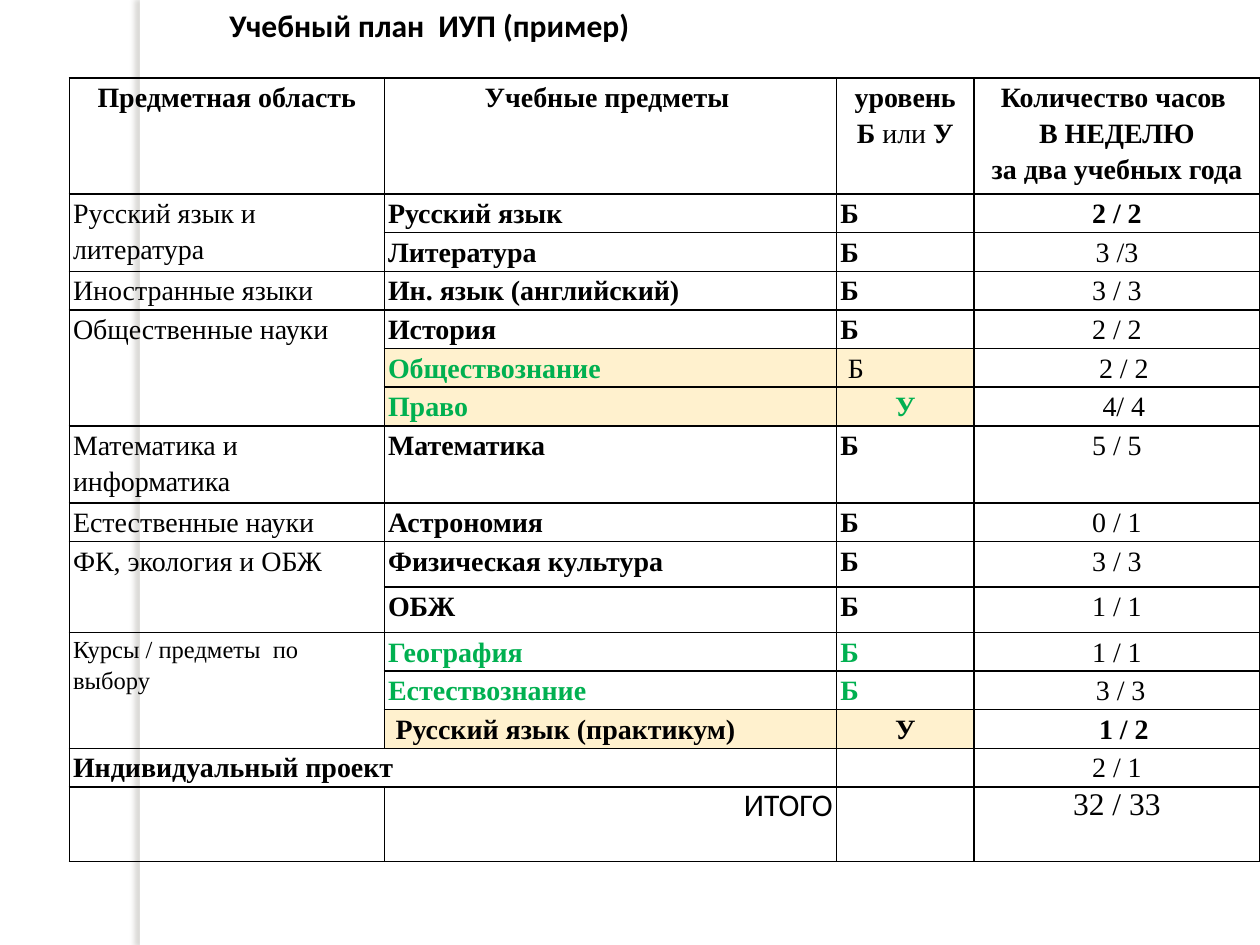
from lxml.etree import SubElement
from pptx import Presentation
from pptx.dml.color import RGBColor
from pptx.enum.shapes import MSO_SHAPE
from pptx.enum.text import MSO_ANCHOR, MSO_AUTO_SIZE, PP_ALIGN
from pptx.oxml import parse_xml
from pptx.oxml.ns import nsdecls, qn
from pptx.util import Inches, Pt

TITLE = "Учебный план  ИУП (пример)"
ROWS = [
    ("Предметная область", "Учебные предметы ", "уровень\nБ |или| У",
     "Количество часов \nВ НЕДЕЛЮ\nза два учебных года"),
    ("Русский язык и литература", "Русский язык", "Б", "2 / 2"),
    ("", "Литература", "Б", "3 /3"),
    ("Иностранные языки", "Ин. язык (английский)", "Б", "3 / 3"),
    ("Общественные науки", "История", "Б", "2 / 2"),
    ("", "Обществознание", "Б", "2 / 2"),
    ("", "Право", "У", "4/ 4"),
    ("Математика и информатика", "Математика", "Б", "5 / 5"),
    ("Естественные науки", "Астрономия", "Б", "0 / 1"),
    ("ФК, экология и ОБЖ", "Физическая культура", "Б", "3 / 3"),
    ("", "ОБЖ", "Б", "1 / 1"),
    ("Курсы / предметы  по выбору", "География", "Б", "1 / 1"),
    ("", "Естествознание", "Б", "3 / 3"),
    ("", "Русский язык (практикум)", "У", "1 / 2"),
    ("Индивидуальный проект", "", "", "2 / 1"),
    ("", "ИТОГО", "", "32 / 33"),
]
COLUMN_WIDTHS = [2.5, 3.59, 1.09, 2.27]
ROW_HEIGHTS = [0.87, 0.28, 0.29, 0.28, 0.28, 0.28, 0.28, 0.57,
               0.28, 0.36, 0.36, 0.29, 0.29, 0.28, 0.29, 0.59]
MERGES = [((1, 0), (2, 0)), ((4, 0), (6, 0)), ((9, 0), (10, 0)),
          ((11, 0), (13, 0)), ((14, 0), (14, 1))]
HIGHLIGHTED_ROWS = (5, 6, 13)
GREEN, CREAM, BLACK = "00B050", "FFF1CE", "000000"
LEFT, CENTER, RIGHT = PP_ALIGN.LEFT, PP_ALIGN.CENTER, PP_ALIGN.RIGHT
COLUMN_FORMATS = [
    {"bold": False}, {"bold": True}, {"bold": True},
    {"bold": False, "align": CENTER},
]
TOTAL = {"size": 18, "spacing": 1.0}
SPECIAL_FORMATS = {
    **{(0, column): {"bold": True, "align": CENTER} for column in range(4)},
    **{(row, 1): {"color": GREEN} for row in (5, 6, 11, 12)},
    **{(row, 2): {"color": GREEN} for row in (11, 12)},
    (1, 3): {"bold": True},
    (5, 2): {"bold": False, "indent": 0.06},
    (5, 3): {"indent": 0.11},
    (6, 2): {"color": GREEN, "align": CENTER},
    (6, 3): {"indent": 0.11},
    (11, 0): {"size": 14},
    (12, 3): {"indent": 0.06},
    (13, 1): {"indent": 0.06},
    (13, 2): {"align": CENTER},
    (13, 3): {"bold": True, "indent": 0.11},
    (14, 0): {"bold": True},
    (15, 1): {**TOTAL, "bold": False, "align": RIGHT, "font": "Calibri"},
    (15, 3): TOTAL,
}


def rgb(value):
    """Turn a hex string into a colour."""
    return RGBColor.from_string(value)


def write(frame, text, size=16, font="Times New Roman", color=BLACK,
          bold=False, align=LEFT, spacing=1.15):
    """Write lines as paragraphs; bars toggle bold."""
    for index, line in enumerate(text.split("\n")):
        para = frame.add_paragraph() if index else frame.paragraphs[0]
        para.alignment = align
        para.line_spacing = spacing
        para.space_before = para.space_after = Pt(0)
        for part, words in enumerate(line.split("|")):
            span = para.add_run()
            span.text = words
            span.font.size = Pt(size)
            span.font.name = font
            span.font.bold = bold if part % 2 == 0 else not bold
            span.font.color.rgb = rgb(color)


def add_borders(cell):
    """Draw thin black lines on all four sides of a cell."""
    properties = cell._tc.get_or_add_tcPr()
    for index, side in enumerate(("lnL", "lnR", "lnT", "lnB")):
        properties.insert(index, parse_xml(
            f'<a:{side} {nsdecls("a")} w="{Pt(1)}"><a:solidFill>'
            f'<a:srgbClr val="{BLACK}"/></a:solidFill></a:{side}>'))


def add_strip(page):
    """Add the white vertical strip with a soft shadow to its left."""
    strip = page.shapes.add_shape(
        MSO_SHAPE.RECTANGLE, Inches(1.11), 0, Inches(0.08), Inches(7.5))
    strip.fill.solid()
    strip.fill.fore_color.rgb = rgb("FFFFFF")
    strip.line.fill.background()
    strip.shadow.inherit = False
    effects = strip._element.spPr.find(qn("a:effectLst"))
    shadow = SubElement(effects, qn("a:outerShdw"), blurRad=str(Pt(3)),
                        dist=str(Pt(3)), dir="10800000", rotWithShape="0")
    tint = SubElement(shadow, qn("a:srgbClr"), val="736F63")
    SubElement(tint, qn("a:alpha"), val="25000")


def add_plan(page):
    """Add the curriculum table."""
    table = page.shapes.add_table(
        len(ROWS), len(COLUMN_WIDTHS), Inches(0.55), Inches(0.62),
        Inches(sum(COLUMN_WIDTHS)), Inches(sum(ROW_HEIGHTS))).table
    table.first_row = table.horz_banding = False
    for column, width in zip(table.columns, COLUMN_WIDTHS):
        column.width = Inches(width)
    for row, height in zip(table.rows, ROW_HEIGHTS):
        row.height = Inches(height)
    for row, texts in enumerate(ROWS):
        for column, text in enumerate(texts):
            cell = table.cell(row, column)
            style = {**COLUMN_FORMATS[column],
                     **SPECIAL_FORMATS.get((row, column), {})}
            cell.margin_left = Inches(0.03 + style.pop("indent", 0))
            cell.margin_right = Inches(0.03)
            cell.margin_top = cell.margin_bottom = 0
            if row in HIGHLIGHTED_ROWS and column in (1, 2):
                cell.fill.solid()
                cell.fill.fore_color.rgb = rgb(CREAM)
            else:
                cell.fill.background()
            add_borders(cell)
            if text:
                write(cell.text_frame, text, **style)
    for first, last in MERGES:
        table.cell(*first).merge(table.cell(*last))


def main():
    """Build and save the slide."""
    deck = Presentation()
    deck.slide_width, deck.slide_height = Inches(10), Inches(7.5)
    page = deck.slides.add_slide(deck.slide_layouts[5])
    add_strip(page)
    add_plan(page)
    title = page.shapes.title
    title.left, title.top = Inches(1.72), 0
    title.width, title.height = Inches(7.89), Inches(0.4)
    frame = title.text_frame
    frame.word_wrap = True
    frame.auto_size = MSO_AUTO_SIZE.SHAPE_TO_FIT_TEXT
    frame.vertical_anchor = MSO_ANCHOR.TOP
    write(frame, TITLE, size=18, font="Calibri", bold=True, spacing=1.0)
    deck.save("out.pptx")


if __name__ == "__main__":
    main()
